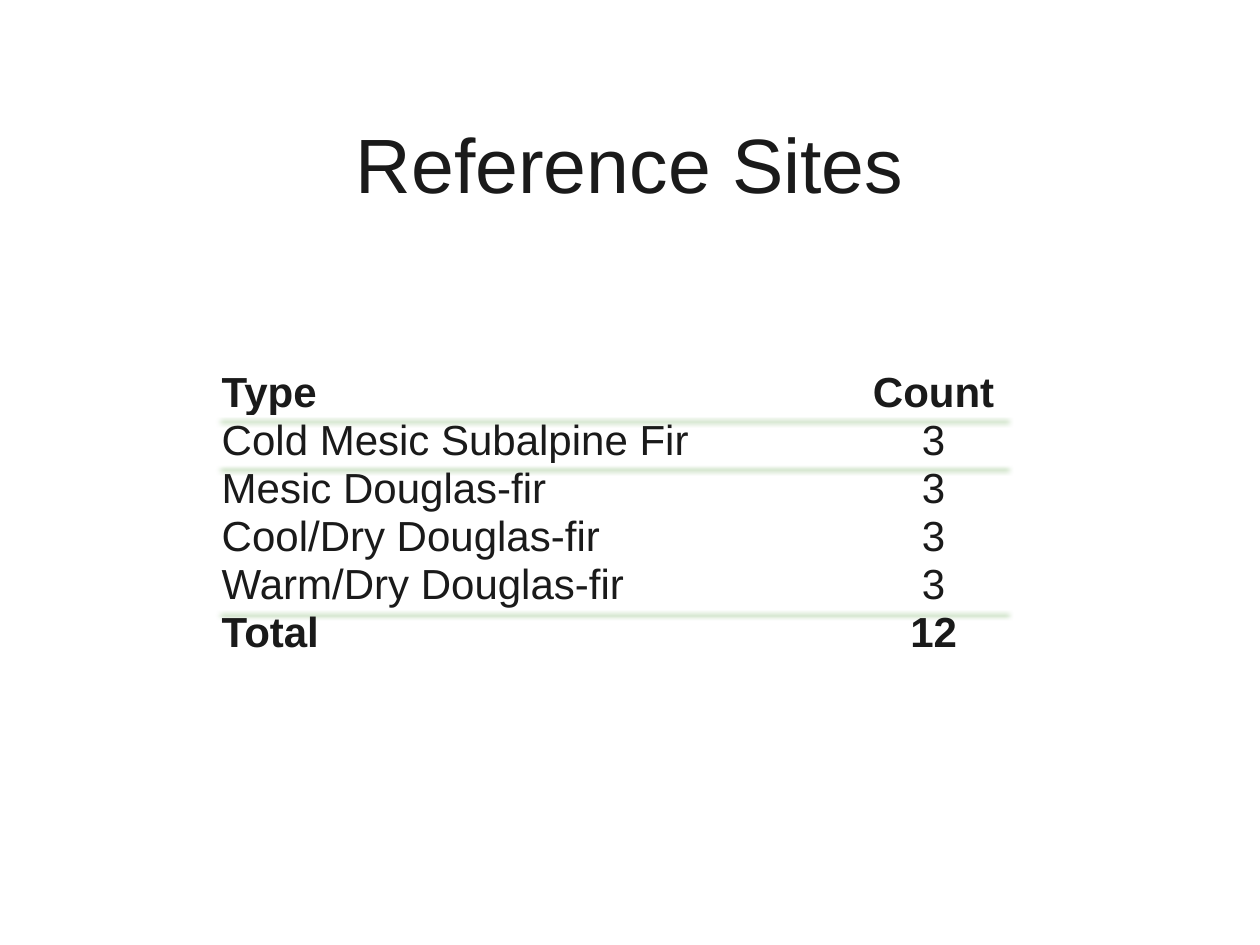
from dataclasses import dataclass

from lxml.etree import SubElement
from pptx import Presentation
from pptx.dml.color import RGBColor
from pptx.enum.text import MSO_ANCHOR as Anchor, PP_ALIGN as Align
from pptx.oxml import parse_xml
from pptx.oxml.ns import nsdecls, qn
from pptx.util import Inches, Pt


@dataclass(frozen=True)
class Theme:
    font: str = "Arial"
    ink: RGBColor = RGBColor(0x1A, 0x1A, 0x1A)
    rule: str = "FFFFFF"
    glow: str = "64A44E"
    title_size: int = 44
    table_size: int = 24


THEME = Theme()
NO_STYLE = "{2D5ABB26-0587-4C30-8999-92F81FD0307C}"
ROWS = [
    ("Type", "Count"),
    ("Cold Mesic Subalpine Fir", "3"),
    ("Mesic Douglas-fir", "3"),
    ("Cool/Dry Douglas-fir", "3"),
    ("Warm/Dry Douglas-fir", "3"),
    ("Total", "12"),
]
LAST = len(ROWS) - 1


def style_text(frame, size, align, bold=False):
    para = frame.paragraphs[0]
    para.alignment = align
    font = para.runs[0].font
    font.name = THEME.font
    font.size = Pt(size)
    font.bold = bold
    font.color.rgb = THEME.ink


def add_border(cell, side):
    """Draw a one-point rule; side is lnT or lnB."""
    properties = cell._tc.get_or_add_tcPr()
    line = parse_xml(
        f'<a:{side} {nsdecls("a")} w="{Pt(1)}"><a:solidFill>'
        f'<a:srgbClr val="{THEME.rule}"/></a:solidFill></a:{side}>'
    )
    properties.insert(0, line)


deck = Presentation()
deck.slide_width, deck.slide_height = Inches(10), Inches(7.5)
page = deck.slides.add_slide(deck.slide_layouts[5])

# Title
title = page.shapes.title
title.left, title.top = Inches(0.5), Inches(0.67)
title.width, title.height = Inches(9), Inches(1.25)
title.text_frame.text = "Reference Sites"
title.text_frame.vertical_anchor = Anchor.MIDDLE
style_text(title.text_frame, THEME.title_size, Align.CENTER)

# Table of site counts
table = page.shapes.add_table(
    len(ROWS), 2, Inches(1.75), Inches(2.92), Inches(6.25), Inches(1.15)
).table
table.first_row = table.horz_banding = False
for column, width in zip(table.columns, (5.07, 1.18)):
    column.width = Inches(width)

for row_index, values in enumerate(ROWS):
    table.rows[row_index].height = Inches(0.25 if row_index == 0 else 0.18)
    for column_index, value in enumerate(values):
        cell = table.cell(row_index, column_index)
        cell.text_frame.text = value
        cell.vertical_anchor = Anchor.BOTTOM
        cell.margin_left = cell.margin_right = cell.margin_top = Inches(0.01)
        cell.margin_bottom = 0
        cell.fill.background()
        style_text(
            cell.text_frame,
            THEME.table_size,
            Align.CENTER if column_index else Align.LEFT,
            bold=row_index in (0, LAST),
        )
        if row_index in (0, LAST - 1):
            add_border(cell, "lnB")
        if row_index in (1, LAST):
            add_border(cell, "lnT")

# Soft green shadow beneath the white rules
table_properties = table._tbl.tblPr
table_properties.find(qn("a:tableStyleId")).text = NO_STYLE
effects = parse_xml(f'<a:effectLst {nsdecls("a")}/>')
table_properties.insert(0, effects)
shadow = SubElement(
    effects, qn("a:outerShdw"),
    blurRad=str(Pt(3)), dist=str(Pt(3.5)), dir="5400000", rotWithShape="0",
)
SubElement(shadow, qn("a:srgbClr"), val=THEME.glow)

deck.save("out.pptx")
